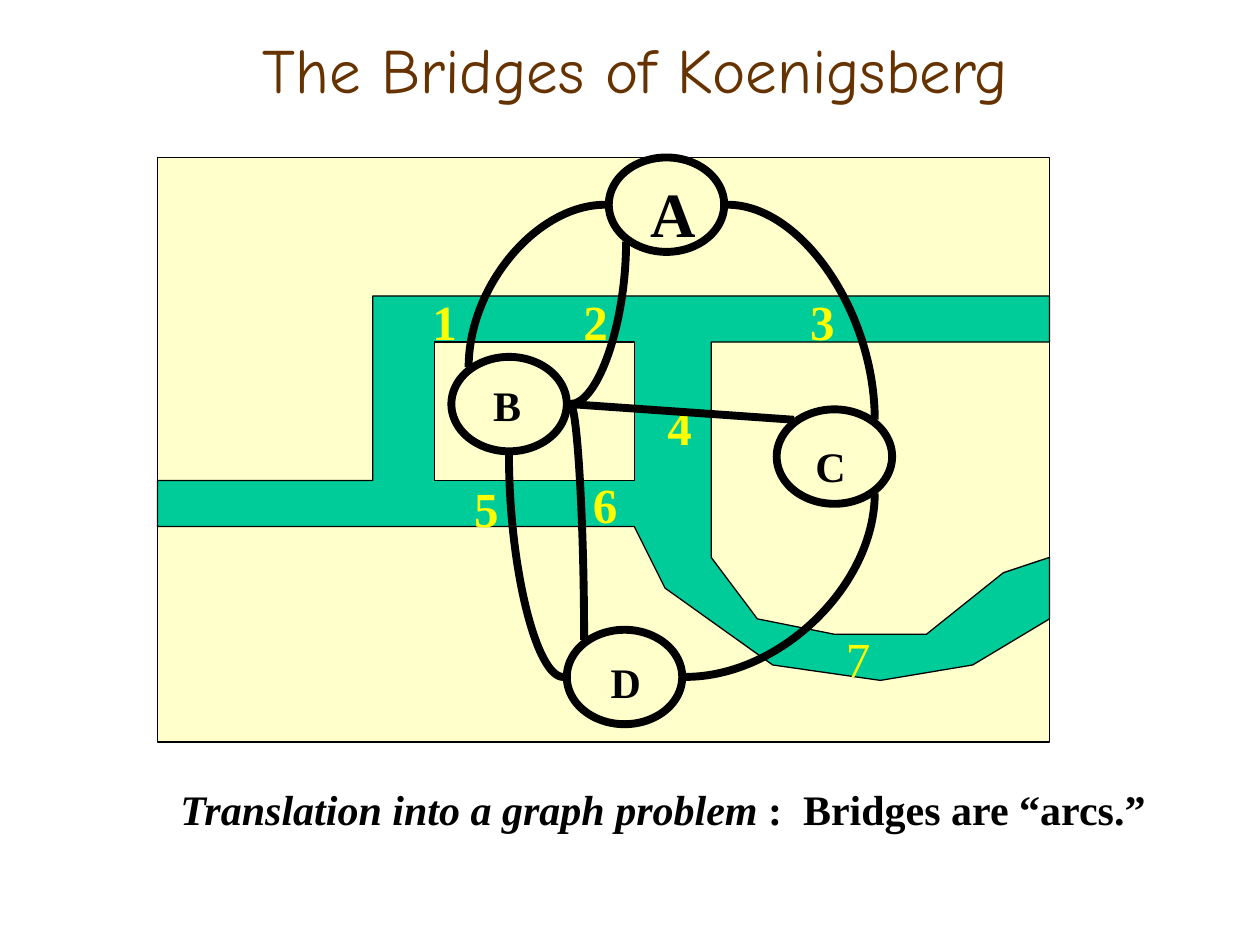
from dataclasses import dataclass

from lxml import etree
from pptx import Presentation
from pptx import util as u
from pptx.dml.color import RGBColor
from pptx.enum import shapes, text
from pptx.oxml.ns import qn


@dataclass(frozen=True)
class Theme:
    land: str = "FFFFCC"
    river: str = "00CC99"
    ink: str = "000000"
    bridge: str = "FFFF00"
    title: str = "663300"
    title_font: str = "Comic Neue"
    body_font: str = "Times New Roman"
    title_size: int = 36
    bridge_size: int = 28
    body_size: int = 24
    outline: float = 0.75
    stroke: float = 4.5


@dataclass(frozen=True)
class Grid:
    """Square cells counted from the top left corner of a region."""
    left: float
    top: float
    cell: float

    def point(self, col, row):
        return u.Inches(self.left + col * self.cell), u.Inches(self.top + row * self.cell)

    def box(self, col, row, cols, rows):
        return (*self.point(col, row), u.Inches(cols * self.cell), u.Inches(rows * self.cell))


THEME = Theme()
PAGE = Grid(0, 0, 1 / 12)          # 120 x 90 cells
MAP_BOX = (1.25, 1.25, 7.08)       # left, top, width
MAP_COLS, MAP_ROWS, GRAPH_COLS = 58, 38, 85

RIVER = [(0, 21), (14, 21), (14, 9), (58, 9), (58, 12), (36, 12), (36, 26),
         (39, 30), (44, 31), (50, 31), (55, 27), (58, 26), (58, 30), (53, 33),
         (47, 34), (40, 33), (33, 28), (31, 24), (0, 24)]

BRIDGES = {"1": (25, 12.2), "2": (39.4, 12.2), "4": (47.4, 22.2), "3": (61, 12.2),
           "7": (64.4, 44.3), "6": (40.3, 29.6), "5": (29, 30)}

# Node: oval position, label offset, label size
NODE_COLS, NODE_ROWS = 11, 9
NODES = {"A": ((43, 0), (2.8, 1), 36), "C": ((59, 24), (2.5, 2.4), 24),
         "D": ((39, 45), (3, 2), 24), "B": ((28, 19), (2.8, 1.6), 24)}

# Points on an oval's rim, as shares of its size
PORTS = {"left": (-0.03, 0.5), "right": (1.03, 0.5), "bottom": (0.5, 1.04),
         "upper left": (0.15, 0.11), "upper right": (0.85, 0.11),
         "lower left": (0.15, 0.89), "lower right": (0.85, 0.89)}

# Each curve leaves its first port level and reaches its second one upright
ARCS = [("A", "left", "B", "upper left"), ("B", "right", "A", "lower left"),
        ("B", "right", "D", "upper left"), ("D", "left", "B", "bottom"),
        ("D", "right", "C", "lower right"), ("A", "right", "C", "upper right")]
STRAIGHT_ARC = ("B", "right", "C", "upper left")


def style_run(run, font, size, color, bold=False, italic=False):
    run.font.name, run.font.size = font, u.Pt(size)
    run.font.color.rgb = RGBColor.from_string(color)
    run.font.bold, run.font.italic = bold, italic


def style_outline(line, width):
    line.color.rgb = RGBColor.from_string(THEME.ink)
    line.width = u.Pt(width)


def style_area(area, fill):
    area.shadow.inherit = False
    area.fill.solid()
    area.fill.fore_color.rgb = RGBColor.from_string(fill)
    style_outline(area.line, THEME.outline)


def add_label(parent, box, parts, size, color, bold=True):
    """Text box with one paragraph; parts are (wording, italic) pairs."""
    frame = parent.add_textbox(*box).text_frame
    frame.word_wrap = True
    paragraph = frame.paragraphs[0]
    before = etree.SubElement(paragraph._p.get_or_add_pPr(), qn("a:spcBef"))
    etree.SubElement(before, qn("a:spcPct")).set("val", "50000")
    for wording, italic in parts:
        run = paragraph.add_run()
        run.text = wording
        style_run(run, THEME.body_font, size, color, bold, italic)


def place_title(slide, box):
    title = slide.shapes.title
    title.left, title.top, title.width, title.height = box
    title.text_frame.text = "The Bridges of Koenigsberg"
    title.text_frame.vertical_anchor = text.MSO_ANCHOR.MIDDLE
    heading = title.text_frame.paragraphs[0]
    heading.alignment = text.PP_ALIGN.CENTER
    style_run(heading.runs[0], THEME.title_font, THEME.title_size, THEME.title)


def place_map(slide, grid):
    def add_land(*cells):
        land = slide.shapes.add_shape(shapes.MSO_SHAPE.RECTANGLE, *grid.box(*cells))
        style_area(land, THEME.land)

    add_land(0, 0, MAP_COLS, MAP_ROWS)
    add_land(17, 13, 16, 10)
    # River, then the island on top of it
    banks = [grid.point(*corner) for corner in RIVER]
    builder = slide.shapes.build_freeform(*banks[0])
    builder.add_line_segments(banks[1:], close=True)
    style_area(builder.convert_to_shape(), THEME.river)
    add_land(18, 12, 13, 9)


def place_bridge_numbers(slide, grid):
    for number, corner in BRIDGES.items():
        add_label(slide.shapes, grid.box(*corner, 7.7, 6.8), [(number, False)],
                  THEME.bridge_size, THEME.bridge, bold=number != "7")


def place_nodes(slide, grid):
    for name, ((col, row), (right, down), size) in NODES.items():
        node = slide.shapes.add_group_shape().shapes
        add_label(node, grid.box(col + right, row + down, 10.3, size / 6),
                  [(name, False)], size, THEME.ink)
        oval = node.add_shape(shapes.MSO_SHAPE.OVAL,
                              *grid.box(col, row, NODE_COLS, NODE_ROWS))
        oval.shadow.inherit = False
        oval.fill.background()
        style_outline(oval.line, THEME.stroke)


def place_arcs(slide, grid):
    def port(name, side):
        (col, row), (across, down) = NODES[name][0], PORTS[side]
        return grid.point(col + across * NODE_COLS, row + down * NODE_ROWS)

    def add_arc(kind, start, start_side, end, end_side):
        arc = slide.shapes.add_connector(kind, *port(start, start_side), *port(end, end_side))
        style_outline(arc.line, THEME.stroke)
        etree.SubElement(arc._element.spPr, qn("a:effectLst"))
        return arc

    for ends in ARCS:
        curve = add_arc(shapes.MSO_CONNECTOR.CURVE, *ends)
        # Quarter bend in place of the default S bend
        curve._element.spPr.find(qn("a:prstGeom")).set("prst", "curvedConnector2")
    add_arc(shapes.MSO_CONNECTOR.STRAIGHT, *STRAIGHT_ARC)


def place_caption(slide, box):
    add_label(slide.shapes, box,
              [("Translation into a graph problem ", True), (":  Bridges are “arcs.”", False)],
              THEME.body_size, THEME.ink)


def main():
    deck = Presentation()
    deck.slide_width, deck.slide_height = u.Inches(10), u.Inches(7.5)
    slide = deck.slides.add_slide(deck.slide_layouts[5])
    left, top, width = MAP_BOX
    graph = Grid(left, top, width / GRAPH_COLS)

    place_title(slide, PAGE.box(5, 1, 111, 11))
    place_map(slide, Grid(left, top, width / MAP_COLS))
    place_bridge_numbers(slide, graph)
    place_caption(slide, PAGE.box(16, 74, 100, 6))
    place_nodes(slide, graph)
    place_arcs(slide, graph)
    deck.save("out.pptx")


if __name__ == "__main__":
    main()
